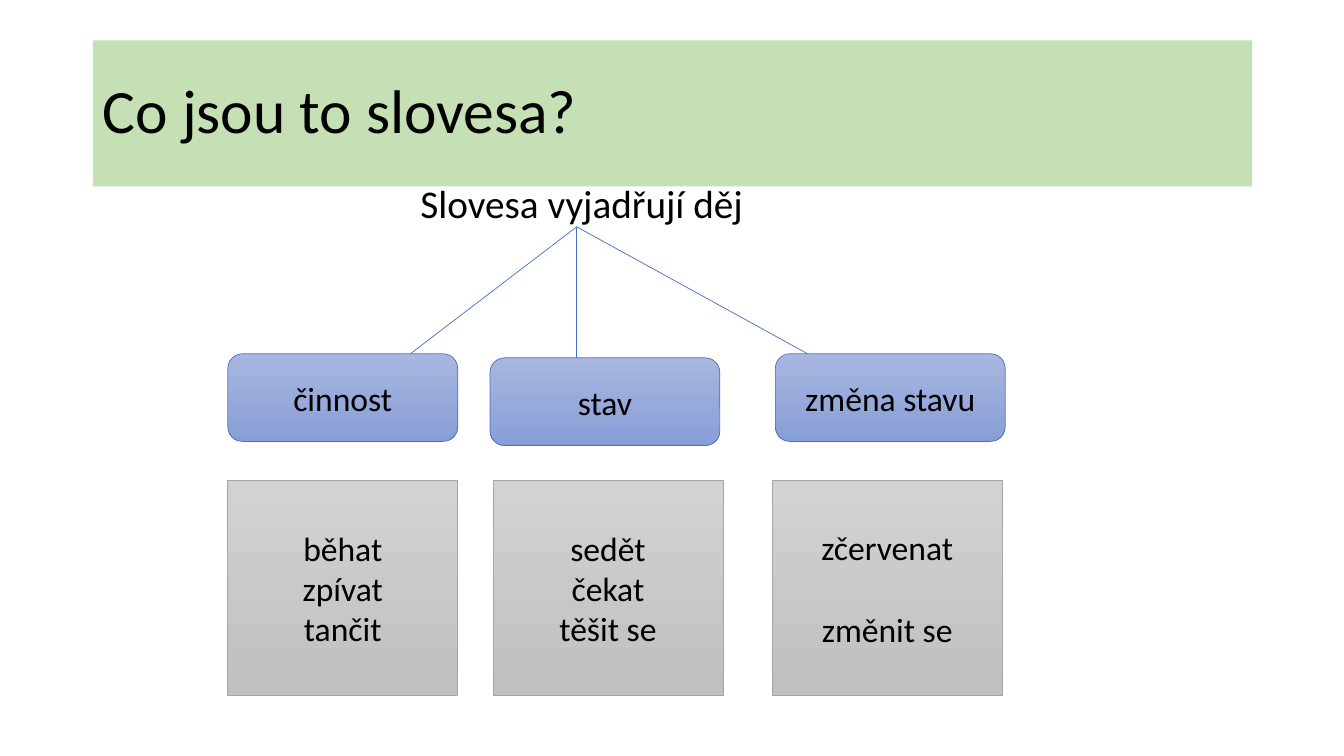
import pptx
import pptx.util
import pptx.dml.color
import pptx.enum.shapes
import pptx.enum.text
import pptx.oxml.ns
import lxml.etree

Inches = pptx.util.Inches
Pt = pptx.util.Pt
Kind = pptx.enum.shapes.MSO_SHAPE
Align = pptx.enum.text.PP_ALIGN
Anchor = pptx.enum.text.MSO_ANCHOR

BLUE = ("A8B7DF", "889ED7", "4472C4")
GREY = ("D2D2D2", "C0C0C0", "A5A5A5")
WIDTH = 2.28
HUB = (5.72, 2.25)
GROUPS = [
    ("činnost", 2.26, 3.51, 2.26, [("běhat", 0), ("zpívat", 0), ("tančit", 0)]),
    ("stav", 4.86, 3.55, 4.89, [("sedět", 0), ("čekat", 0), ("těšit se", 0)]),
    ("změna stavu", 7.69, 3.51, 7.66, [("zčervenat", 0), ("změnit se", 29.3)]),
]
ENDS = [(4.07, 3.51), (5.72, 3.83), (8.01, 3.51)]


def color(code):
    """Turn a hex string into a colour."""
    return pptx.dml.color.RGBColor.from_string(code)


def write(par, text, size, align):
    """Add one run of black Calibri to a paragraph."""
    par.alignment = align
    run = par.add_run()
    run.text = text
    run.font.name = "Calibri"
    run.font.size = Pt(size)
    run.font.color.rgb = color("000000")


def place(shape, left, top, width, height):
    """Move and size a placeholder."""
    shape.left, shape.top = Inches(left), Inches(top)
    shape.width, shape.height = Inches(width), Inches(height)


def head(slide, text):
    """Fill the title on its green band."""
    title = slide.shapes.title
    place(title, 0.92, 0.4, 11.5, 1.45)
    title.fill.solid()
    title.fill.fore_color.rgb = color("C5E0B4")
    title.text_frame.vertical_anchor = Anchor.MIDDLE
    par = title.text_frame.paragraphs[0]
    par.line_spacing = 0.9
    write(par, text, 44, Align.LEFT)


def lead(slide, text):
    """Fill the body with one line without a bullet."""
    body = slide.placeholders[1]
    place(body, 4.07, 1.78, 9, 1.53)
    par = body.text_frame.paragraphs[0]
    par.line_spacing = 0.9
    par.space_before = Pt(10)
    write(par, text, 28, Align.LEFT)
    props = par._p.get_or_add_pPr()
    props.set("marL", "0")
    props.set("indent", "0")
    lxml.etree.SubElement(props, pptx.oxml.ns.qn("a:buNone"))


def branch(slide, start, end):
    """Draw a thin blue line between two points."""
    line = slide.shapes.add_connector(
        pptx.enum.shapes.MSO_CONNECTOR.STRAIGHT,
        *[Inches(n) for n in start + end])
    line.line.color.rgb = color(BLUE[2])
    line.line.width = Pt(0.5)
    lxml.etree.SubElement(line._element.spPr, pptx.oxml.ns.qn("a:effectLst"))


def box(slide, kind, left, top, height, tones, lines):
    """Draw a shaded box with centred lines, each given as text and gap."""
    shape = slide.shapes.add_shape(
        kind, Inches(left), Inches(top), Inches(WIDTH), Inches(height))
    shape.shadow.inherit = False
    shape.fill.gradient()
    shape.fill.gradient_angle = 270
    for stop, tone in zip(shape.fill.gradient_stops, tones):
        stop.color.rgb = color(tone)
    shape.line.color.rgb = color(tones[2])
    shape.line.width = Pt(0.5)
    frame = shape.text_frame
    frame.word_wrap = True
    frame.vertical_anchor = Anchor.MIDDLE
    for i, (text, gap) in enumerate(lines):
        par = frame.add_paragraph() if i else frame.paragraphs[0]
        par.space_before = Pt(gap)
        write(par, text, 24, Align.CENTER)


def main():
    """Build the slide and save it."""
    deck = pptx.Presentation()
    deck.slide_width, deck.slide_height = Inches(13.33), Inches(7.5)
    slide = deck.slides.add_slide(deck.slide_layouts[1])
    head(slide, "Co jsou to slovesa?")
    lead(slide, "Slovesa vyjadřují děj")
    for end in ENDS:
        branch(slide, HUB, end)
    for name, left, top, under, verbs in GROUPS:
        box(slide, Kind.ROUNDED_RECTANGLE, left, top, 0.87, BLUE, [(name, 0)])
        box(slide, Kind.RECTANGLE, under, 4.77, 2.13, GREY, verbs)
    deck.save("out.pptx")


if __name__ == "__main__":
    main()
